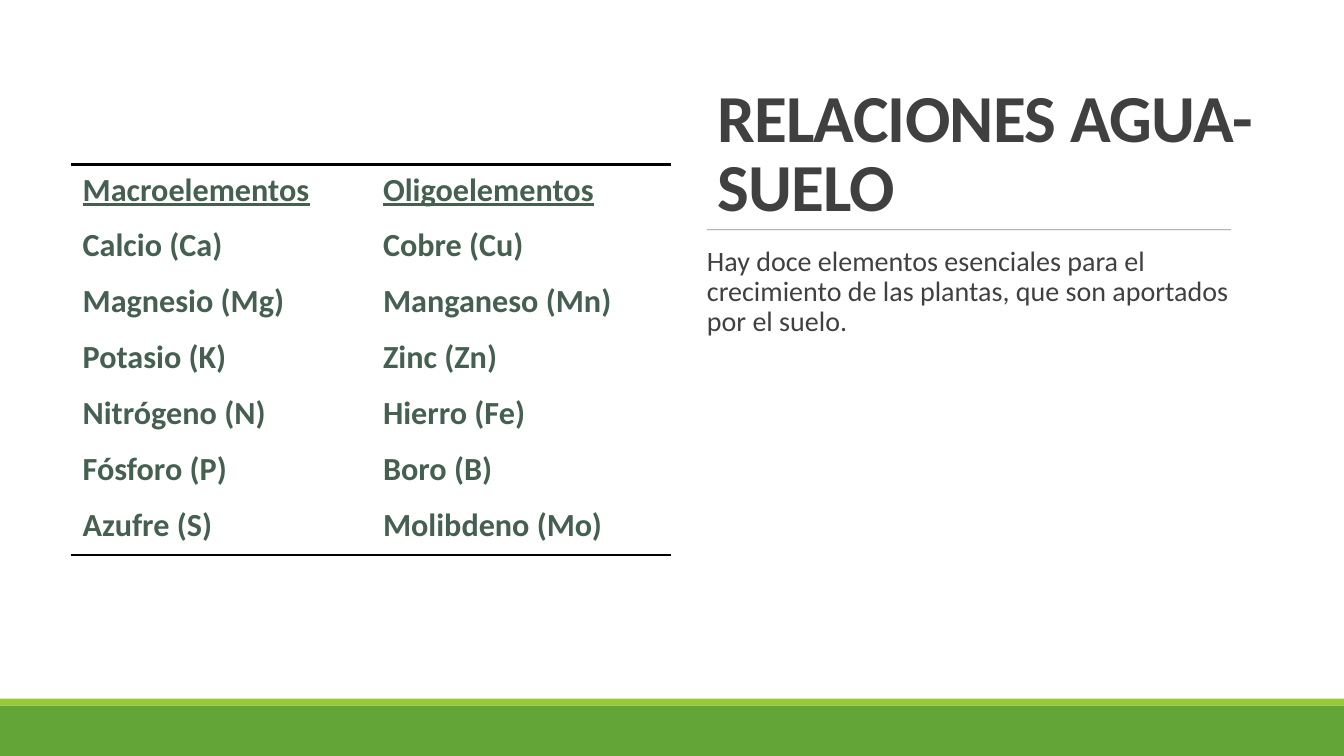
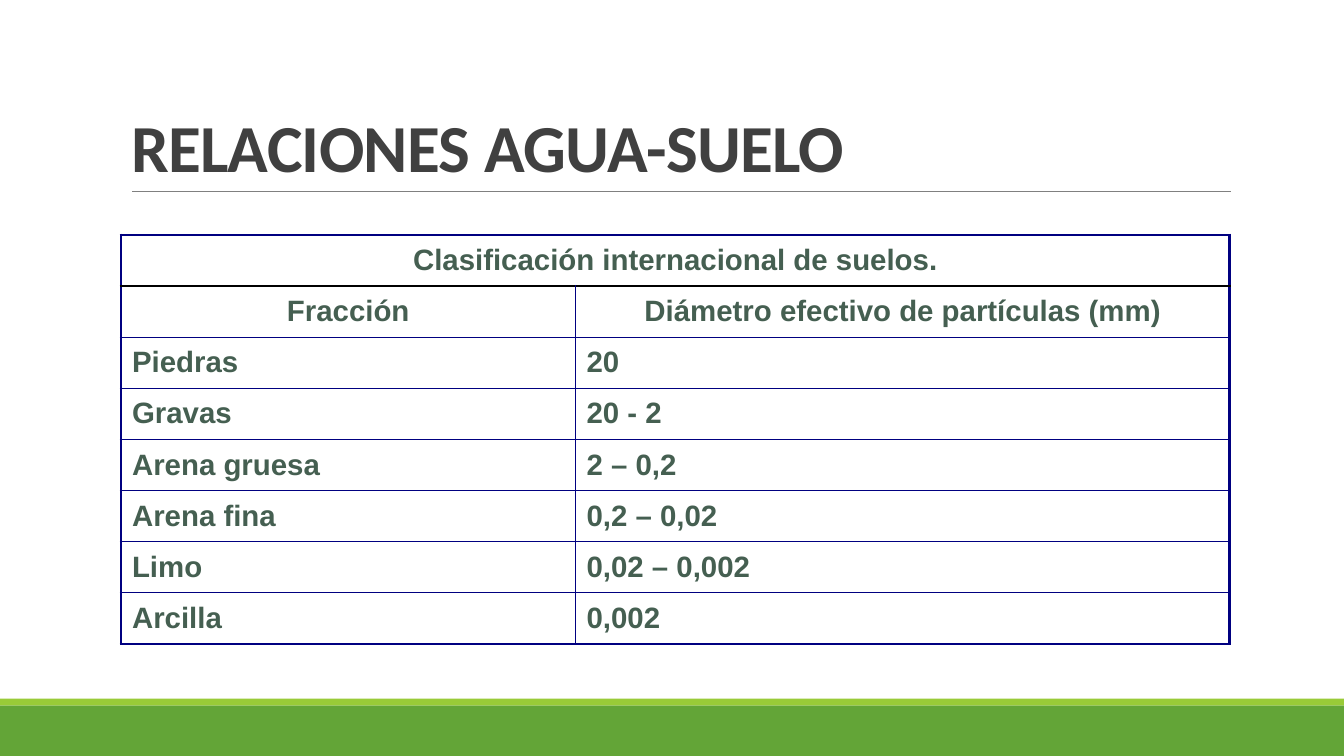
from lxml import etree
from pptx import Presentation
from pptx import util as u
from pptx.dml.color import RGBColor
from pptx.enum import shapes, text
from pptx.oxml.ns import qn

WHITE = RGBColor(0xFF, 0xFF, 0xFF)
BLACK = RGBColor(0x00, 0x00, 0x00)
DARK = RGBColor(0x40, 0x40, 0x40)
GRAY = RGBColor(0x80, 0x80, 0x80)
LIME = RGBColor(0x99, 0xCB, 0x38)
GREEN = RGBColor(0x63, 0xA5, 0x37)
PINE = RGBColor(0x45, 0x5F, 0x51)
NAVY = RGBColor(0x00, 0x00, 0x80)

TITLE = "RELACIONES AGUA-SUELO"
TITLE_AND_BODY, TITLE_ONLY = 1, 5
PLAIN_TABLE = "{2D5ABB26-0587-4C30-8999-92F81FD0307C}"
ELEMENTS = [
    ("Macroelementos", "Oligoelementos"),
    ("Calcio (Ca)", "Cobre (Cu)"),
    ("Magnesio (Mg)", "Manganeso (Mn)"),
    ("Potasio (K)", "Zinc (Zn)"),
    ("Nitrógeno (N)", "Hierro (Fe)"),
    ("Fósforo (P)", "Boro (B)"),
    ("Azufre (S)", "Molibdeno (Mo)"),
]
SOILS = [
    ("Clasificación internacional de suelos.", ""),
    ("Fracción", "Diámetro efectivo de partículas (mm)"),
    ("Piedras", "20"),
    ("Gravas", "20 - 2"),
    ("Arena gruesa", "2 – 0,2"),
    ("Arena fina", "0,2 – 0,02"),
    ("Limo", "0,02 – 0,002"),
    ("Arcilla", "0,002"),
]


class Deck:
    def __init__(self):
        self.presentation = Presentation()
        self.presentation.slide_width = u.Inches(13.33)
        self.presentation.slide_height = u.Inches(7.5)
        self.slide = None

    def x(self, percent):
        return round(self.presentation.slide_width * percent / 100)

    def y(self, percent):
        return round(self.presentation.slide_height * percent / 100)

    def box(self, left, top, width, height):
        return self.x(left), self.y(top), self.x(width), self.y(height)

    def add_slide(self, layout):
        self.slide = self.presentation.slides.add_slide(
            self.presentation.slide_layouts[layout])
        self.band(92.4, 0.93, LIME)
        self.band(93.33, 6.67, GREEN)

    def band(self, top, height, color):
        band = self.slide.shapes.add_shape(
            shapes.MSO_SHAPE.RECTANGLE, *self.box(0, top, 100, height))
        band.shadow.inherit = False
        band.fill.solid()
        band.fill.fore_color.rgb = color
        band.line.fill.background()

    def style(self, paragraph, size, color, font="Calibri", bold=False):
        paragraph.font.name = font
        paragraph.font.size = u.Pt(size)
        paragraph.font.bold = bold
        paragraph.font.color.rgb = color

    def fill_placeholder(self, holder, area, words, anchor):
        holder.left, holder.top, holder.width, holder.height = self.box(*area)
        frame = holder.text_frame
        frame.text = words
        frame.word_wrap = True
        frame.auto_size = text.MSO_AUTO_SIZE.NONE
        frame.vertical_anchor = anchor
        paragraph = frame.paragraphs[0]
        paragraph.alignment = text.PP_ALIGN.LEFT
        paragraph.space_before = u.Pt(0)
        return frame, paragraph

    def title(self, left, top, width, height):
        _, paragraph = self.fill_placeholder(
            self.slide.shapes.title, (left, top, width, height),
            TITLE, text.MSO_ANCHOR.BOTTOM)
        paragraph.line_spacing = 0.85
        paragraph.space_after = u.Pt(6)
        self.style(paragraph, 48, DARK, bold=True)
        paragraph.runs[0]._r.get_or_add_rPr().set("spc", "-50")

    def body(self, words, *area):
        frame, paragraph = self.fill_placeholder(
            self.slide.placeholders[1], area, words, text.MSO_ANCHOR.TOP)
        frame.margin_left = frame.margin_right = 0
        frame.margin_top = frame.margin_bottom = u.Inches(0.05)
        paragraph.line_spacing = 0.9
        properties = paragraph._p.get_or_add_pPr()
        properties.set("marL", "0")
        properties.set("indent", "0")
        etree.SubElement(properties, qn("a:buNone"))
        self.style(paragraph, 20, DARK)

    def rule(self, left, right, top, opacity=100):
        rule = self.slide.shapes.add_connector(
            shapes.MSO_CONNECTOR.STRAIGHT,
            self.x(left), self.y(top), self.x(right), self.y(top))
        rule.line.color.rgb = GRAY
        rule.line.width = u.Pt(0.5)
        properties = rule._element.spPr
        if opacity < 100:
            color = properties.find(".//" + qn("a:srgbClr"))
            etree.SubElement(color, qn("a:alpha"), val=str(opacity * 1000))
        etree.SubElement(properties, qn("a:effectLst"))

    def table(self, rows, area, shares):
        left, top, width, height = self.box(*area)
        table = self.slide.shapes.add_table(
            len(rows), len(shares), left, top, width, height).table
        table.first_row = table.horz_banding = False
        table._tbl.tblPr.find(qn("a:tableStyleId")).text = PLAIN_TABLE
        for column, share in zip(table.columns, shares):
            column.width = round(width * share)
        for row in table.rows:
            row.height = round(height / len(rows))
        return table

    def cell(self, cell, words, borders, margins, anchor, alignment, **font):
        cell.margin_left = cell.margin_right = u.Inches(margins[0])
        cell.margin_top = cell.margin_bottom = u.Inches(margins[1])
        cell.vertical_anchor = anchor
        self.borders(cell, borders)
        cell.fill.solid()
        cell.fill.fore_color.rgb = WHITE
        if words:
            cell.text = words
            paragraph = cell.text_frame.paragraphs[0]
            paragraph.alignment = alignment
            properties = paragraph._p.get_or_add_pPr()
            properties.set("marL", str(u.Inches(0.38)))
            properties.set("indent", str(-u.Inches(0.38)))
            self.style(paragraph, color=PINE, bold=True, **font)

    def borders(self, cell, borders):
        properties = cell._tc.get_or_add_tcPr()
        for side in "LRTB":
            if side in borders:
                color, points = borders[side]
                line = etree.SubElement(
                    properties, qn(f"a:ln{side}"), w=str(u.Pt(points)))
                fill = etree.SubElement(line, qn("a:solidFill"))
                etree.SubElement(fill, qn("a:srgbClr"), val=str(color))

    def save(self):
        self.presentation.save("out.pptx")


def elements_slide(deck):
    deck.add_slide(TITLE_AND_BODY)
    deck.title(52.6, 9.2, 42.1, 21.2)
    deck.rule(52.6, 91.6, 30.4, opacity=90)
    deck.body("Hay doce elementos esenciales para el crecimiento de las "
              "plantas, que son aportados por el suelo.", 52.6, 32, 41.25, 53.5)
    table = deck.table(ELEMENTS, (5.25, 21.73, 44.7, 51.73), (0.5, 0.5))
    edges = {0: {"T": (BLACK, 2)}, len(ELEMENTS) - 1: {"B": (BLACK, 2)}}
    for r, row in enumerate(ELEMENTS):
        for c, words in enumerate(row):
            cell = table.cell(r, c)
            deck.cell(cell, words, edges.get(r, {}), (0.12, 0.06),
                      text.MSO_ANCHOR.TOP, text.PP_ALIGN.JUSTIFY, size=23)
            if r == 0:
                cell.text_frame.paragraphs[0].font.underline = True


def soils_slide(deck):
    deck.add_slide(TITLE_ONLY)
    deck.rule(9.83, 91.6, 25.33)
    deck.title(9, 4.13, 82.5, 21.2)
    table = deck.table(SOILS, (9, 31.07, 82.5, 54.13), (0.41, 0.59))
    table.cell(0, 0).merge(table.cell(0, 1))
    outer, inner, heading = (NAVY, 2), (NAVY, 1), (BLACK, 2)
    last = len(SOILS) - 1
    for r, row in enumerate(SOILS):
        for c, words in enumerate(row):
            cell = table.cell(r, c)
            borders = {
                "L": outer if c == 0 else inner,
                "R": outer if c + cell.span_width >= len(row) else inner,
                "T": {0: outer, 1: heading}.get(r, inner),
                "B": {0: heading, last: outer}.get(r, inner),
            }
            alignment = text.PP_ALIGN.CENTER if r < 2 else text.PP_ALIGN.JUSTIFY
            deck.cell(cell, words, borders, (0.11, 0.05),
                      text.MSO_ANCHOR.MIDDLE, alignment, size=21, font="Arial")


def main():
    deck = Deck()
    elements_slide(deck)
    soils_slide(deck)
    deck.save()


if __name__ == "__main__":
    main()
